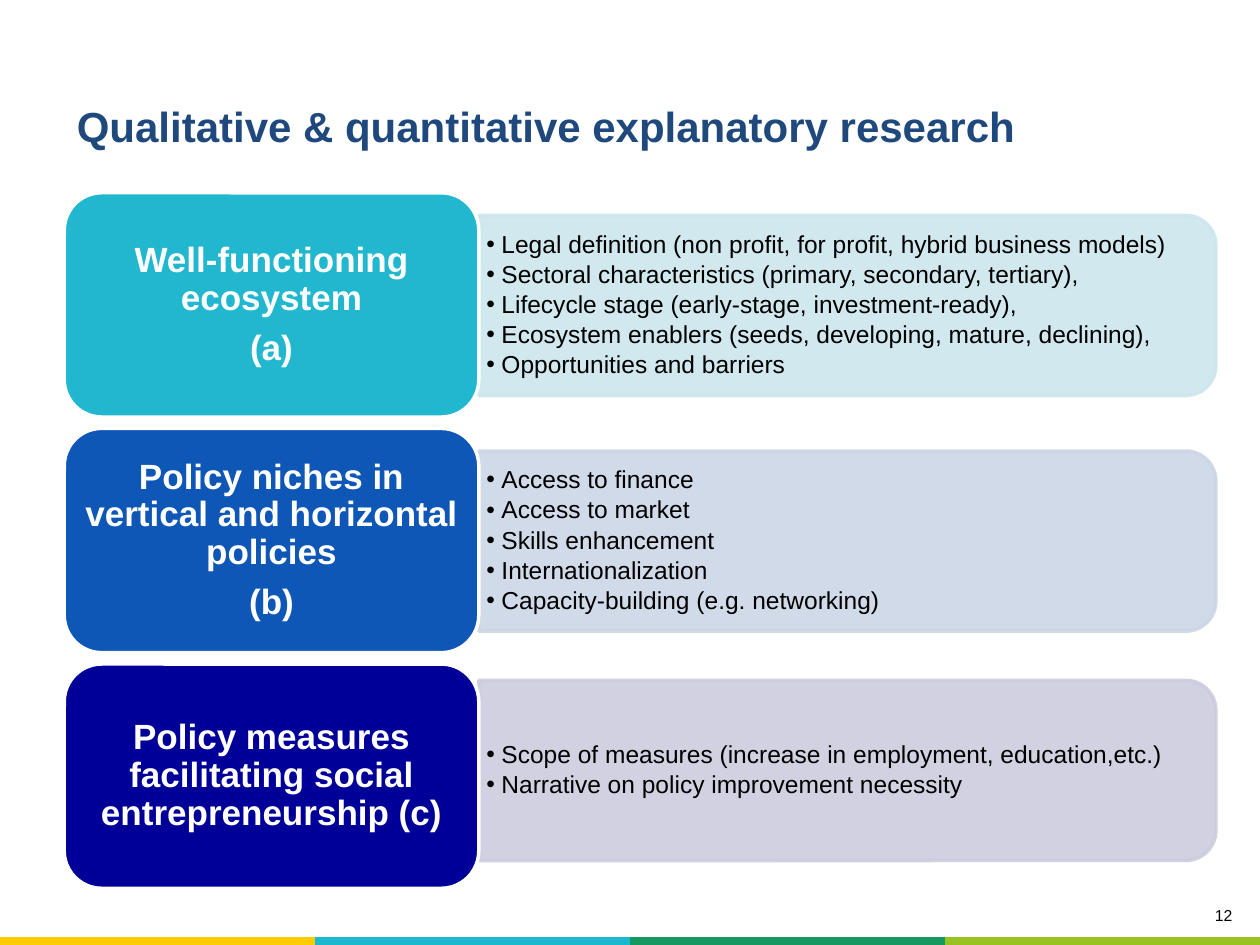
from dataclasses import dataclass

import lxml.etree
import pptx
import pptx.dml.color
import pptx.enum.shapes
import pptx.enum.text
import pptx.oxml
import pptx.oxml.ns
import pptx.util

Inches = pptx.util.Inches
Pt = pptx.util.Pt
qn = pptx.oxml.ns.qn
MIDDLE = pptx.enum.text.MSO_ANCHOR.MIDDLE
ALIGN = pptx.enum.text.PP_ALIGN
SHAPE = pptx.enum.shapes.MSO_SHAPE


@dataclass(frozen=True)
class Theme:
    font: str = "Arial"
    title: str = "1F497D"
    text: str = "000000"
    light: str = "FFFFFF"
    strip: tuple = ("FFCC00", "1CB8CF", "159961", "98C222")
    title_size: int = 24
    card_size: int = 20
    list_size: int = 14
    number_size: int = 9
    line_width: int = 2
    panel_opacity: int = 90


@dataclass(frozen=True)
class Section:
    heading: str
    items: tuple
    card_color: str
    panel_color: str
    panel_offset: float


THEME = Theme()
NO_STYLE_TABLE = "{2D5ABB26-0587-4C30-8999-92F81FD0307C}"
CARD_LEFT, CARD_TOP, CARD_WIDTH, CARD_HEIGHT = 0.51, 1.53, 3.29, 1.78
SECTION_PITCH = 1.87
PANEL_LEFT, PANEL_WIDTH, PANEL_HEIGHT = 3.8, 5.85, 1.43
LIST_INSET = 0.07

SECTIONS = (
    Section(
        "Well-functioning ecosystem\n(a)",
        (
            "Legal definition (non profit, for profit, hybrid business models)",
            "Sectoral characteristics (primary, secondary, tertiary),",
            "Lifecycle stage (early-stage, investment-ready),",
            "Ecosystem enablers (seeds, developing, mature, declining),",
            "Opportunities and barriers",
        ),
        "21B7CF", "CDE6ED", 0.18,
    ),
    Section(
        "Policy niches in vertical and horizontal policies\n(b)",
        (
            "Access to finance",
            "Access to market",
            "Skills enhancement",
            "Internationalization",
            "Capacity-building (e.g. networking)",
        ),
        "0E57B7", "CCD6E6", 0.18,
    ),
    Section(
        "Policy measures facilitating social entrepreneurship (c)",
        (
            "Scope of measures (increase in employment, education,etc.)",
            "Narrative on policy improvement necessity",
        ),
        "000099", "CCCCDE", 0.13,
    ),
)


def rgb(color):
    return pptx.dml.color.RGBColor.from_string(color)


def place(shape, left, top, width, height):
    shape.left, shape.top = Inches(left), Inches(top)
    shape.width, shape.height = Inches(width), Inches(height)


def set_frame(text_frame, horizontal, vertical, anchor):
    text_frame.word_wrap = True
    text_frame.auto_size = pptx.enum.text.MSO_AUTO_SIZE.NONE
    text_frame.vertical_anchor = anchor
    text_frame.margin_left = text_frame.margin_right = Inches(horizontal)
    text_frame.margin_top = text_frame.margin_bottom = Inches(vertical)


def format_text(text_frame, size, color, bold=False, align=ALIGN.LEFT,
                line_spacing=1.0, space_after=0):
    for paragraph in text_frame.paragraphs:
        paragraph.alignment = align
        paragraph.line_spacing = line_spacing
        paragraph.space_before = Pt(0)
        paragraph.space_after = Pt(space_after)
        for run in paragraph.runs:
            run.font.name = THEME.font
            run.font.size = Pt(size)
            run.font.bold = bold
            run.font.color.rgb = rgb(color)


def add_bullet(paragraph, indent):
    properties = paragraph._p.get_or_add_pPr()
    properties.set("marL", str(Inches(indent)))
    properties.set("indent", str(-Inches(indent)))
    lxml.etree.SubElement(properties, qn("a:buFont"), typeface=THEME.font)
    lxml.etree.SubElement(properties, qn("a:buChar"), char="•")


def add_box(slide, preset, bounds, fill, line):
    shape = slide.shapes.add_shape(preset, *map(Inches, bounds))
    shape.shadow.inherit = False
    shape.fill.solid()
    shape.fill.fore_color.rgb = rgb(fill)
    shape.line.color.rgb = rgb(line)
    shape.line.width = Pt(THEME.line_width)
    return shape


def add_panel(slide, top, color):
    left = PANEL_LEFT + (PANEL_WIDTH - PANEL_HEIGHT) / 2
    rotated_top = top + (PANEL_HEIGHT - PANEL_WIDTH) / 2
    bounds = (left, rotated_top, PANEL_HEIGHT, PANEL_WIDTH)
    panel = add_box(slide, SHAPE.ROUND_2_SAME_RECTANGLE, bounds, color, color)
    panel.rotation = 90
    for value in panel._element.spPr.iter(qn("a:srgbClr")):
        lxml.etree.SubElement(value, qn("a:alpha"), val=str(THEME.panel_opacity * 1000))


def fill_list(slide, placeholder, top, items):
    place(placeholder, PANEL_LEFT, top + LIST_INSET,
          PANEL_WIDTH - LIST_INSET, PANEL_HEIGHT - 2 * LIST_INSET)
    slide.shapes._spTree.append(placeholder._element)
    text_frame = placeholder.text_frame
    text_frame.text = "\n".join(items)
    set_frame(text_frame, 0.06, 0.03, MIDDLE)
    for paragraph in text_frame.paragraphs:
        add_bullet(paragraph, 0.12)
    format_text(text_frame, THEME.list_size, THEME.text,
                line_spacing=0.9, space_after=2.1)


def add_card(slide, top, section):
    bounds = (CARD_LEFT, top, CARD_WIDTH, CARD_HEIGHT)
    card = add_box(slide, SHAPE.ROUNDED_RECTANGLE, bounds, section.card_color, THEME.light)
    card.text_frame.text = section.heading
    set_frame(card.text_frame, 0.08, 0.04, MIDDLE)
    format_text(card.text_frame, THEME.card_size, THEME.light, True,
                ALIGN.CENTER, 0.9, 7)


def add_color_strip(slide):
    bounds = map(Inches, (0, 7.44, 10, 0.06))
    table = slide.shapes.add_table(1, len(THEME.strip), *bounds).table
    table.first_row = table.horz_banding = False
    table._tbl.tblPr.find(qn("a:tableStyleId")).text = NO_STYLE_TABLE
    for cell, color in zip(table.rows[0].cells, THEME.strip):
        cell.fill.solid()
        cell.fill.fore_color.rgb = rgb(color)
        cell.margin_left = cell.margin_right = cell.margin_top = cell.margin_bottom = 0
        cell.text_frame.paragraphs[0]._p.get_or_add_endParaRPr().set("sz", "100")


def add_slide_number(slide, number):
    box = slide.shapes.add_textbox(*map(Inches, (7.91, 7.14, 1.97, 0.31)))
    box.text_frame.text = number
    set_frame(box.text_frame, 0.1, 0.05, pptx.enum.text.MSO_ANCHOR.TOP)
    format_text(box.text_frame, THEME.number_size, THEME.text, align=ALIGN.RIGHT)


def set_title(slide, text):
    title = slide.shapes.title
    place(title, 0.51, 0.6, 9, 0.79)
    title.text_frame.text = text
    set_frame(title.text_frame, 0.1, 0.05, MIDDLE)
    format_text(title.text_frame, THEME.title_size, THEME.title, True)


def main():
    presentation = pptx.Presentation()
    presentation.slide_width, presentation.slide_height = Inches(10), Inches(7.5)
    slide = presentation.slides.add_slide(presentation.slide_layouts.get_by_name("Comparison"))
    title, *bodies = slide.placeholders
    add_color_strip(slide)
    add_slide_number(slide, "12")
    set_title(slide, "Qualitative & quantitative explanatory research")
    for index, section in enumerate(SECTIONS):
        top = CARD_TOP + index * SECTION_PITCH
        panel_top = top + section.panel_offset
        add_panel(slide, panel_top, section.panel_color)
        fill_list(slide, bodies[index], panel_top, section.items)
        add_card(slide, top, section)
    for spare in bodies[len(SECTIONS):]:
        slide.shapes._spTree.remove(spare._element)
    presentation.save("out.pptx")


if __name__ == "__main__":
    main()
